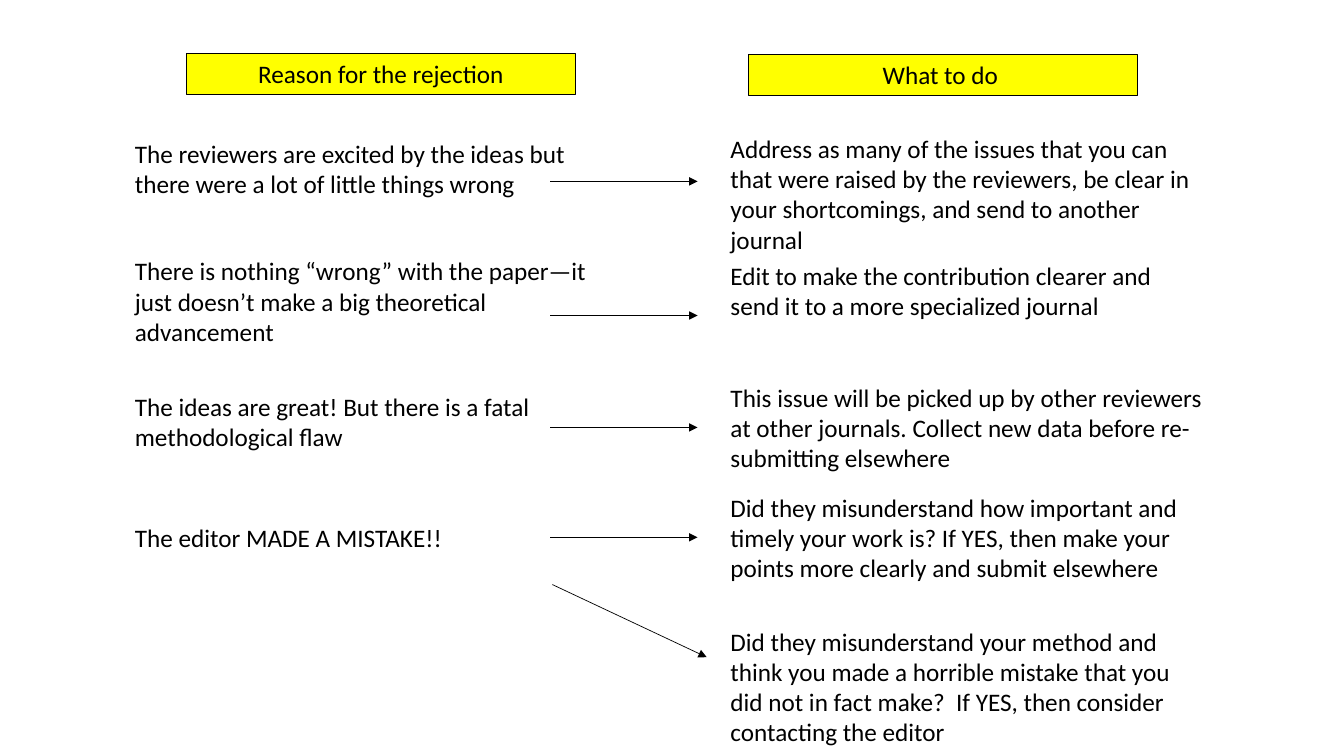
from lxml import etree
from pptx import Presentation
from pptx.dml.color import RGBColor
from pptx.enum.shapes import MSO_CONNECTOR, MSO_SHAPE
from pptx.enum.text import MSO_ANCHOR, MSO_AUTO_SIZE, PP_ALIGN
from pptx.oxml.ns import qn
from pptx.util import Cm, Pt

STRAIGHT = MSO_CONNECTOR.STRAIGHT
RECTANGLE = MSO_SHAPE.RECTANGLE
TOP = MSO_ANCHOR.TOP
GROW = MSO_AUTO_SIZE.SHAPE_TO_FIT_TEXT
LEFT, CENTER = PP_ALIGN.LEFT, PP_ALIGN.CENTER

COLORS = {"ink": "000000", "heading": "FFFF00"}
FRAME_FORMAT = {"word_wrap": True, "auto_size": GROW, "vertical_anchor": TOP}
FONT_FORMAT = {"name": "Calibri", "size": Pt(18)}

# Centimetres
REASON_LEFT, ADVICE_LEFT, COLUMN_WIDTH = 3.15, 18.16, 12.45
HEADING_WIDTH = 9.8
LINE_HEIGHT, PADDING = 0.77, 0.26
ARROW_START, ARROW_END = 13.87, 17.58

HEADINGS = [
    (4.7, 1.35, "Reason for the rejection"),
    (18.87, 1.37, "What to do "),
]

# Top edge, number of lines, wording
REASONS = [
    (3.35, 2, "The reviewers are excited by the ideas but there were a lot of "
              "little things wrong"),
    (6.32, 3, "There is nothing “wrong” with the paper—it just doesn’t make a "
              "big theoretical advancement"),
    (9.73, 2, "The ideas are great! But there is a fatal methodological flaw"),
    (13.03, 1, "The editor MADE A MISTAKE!!"),
]
ADVICE = [
    (3.23, 4, "Address as many of the issues that you can that were raised by the "
              "reviewers, be clear in your shortcomings, and send to another journal"),
    (6.43, 2, "Edit to make the contribution clearer and send it to a more "
              "specialized journal"),
    (9.5, 3, "This issue will be picked up by other reviewers at other journals. "
             "Collect new data before re-submitting elsewhere"),
    (12.27, 3, "Did they misunderstand how important and timely your work is? "
               "If YES, then make your points more clearly and submit elsewhere"),
    (15.65, 4, "Did they misunderstand your method and think you made a horrible "
               "mistake that you did not in fact make?  If YES, then consider "
               "contacting the editor"),
]
ARROW_HEIGHTS = [4.57, 7.95, 10.77, 13.54]
SECOND_MISTAKE_ARROW = ((13.92, 14.73), (17.81, 16.56))


def set_all(target, values):
    for attribute, value in values.items():
        setattr(target, attribute, value)


def color(name):
    return RGBColor.from_string(COLORS[name])


def text_height(lines):
    return PADDING + LINE_HEIGHT * lines


class RejectionSlide:
    """Draws each kind of element on the slide in one shared style."""

    def __init__(self, slide):
        self.shapes = slide.shapes

    def add_wording(self, shape, wording, alignment):
        set_all(shape.text_frame, FRAME_FORMAT)
        paragraph = shape.text_frame.paragraphs[0]
        paragraph.alignment = alignment
        run = paragraph.add_run()
        run.text = wording
        set_all(run.font, FONT_FORMAT)
        run.font.color.rgb = color("ink")

    def outline(self, line, width):
        line.color.rgb = color("ink")
        line.width = Pt(width)

    def heading(self, left, top, wording):
        banner = self.shapes.add_shape(
            RECTANGLE, Cm(left), Cm(top), Cm(HEADING_WIDTH), Cm(text_height(1)))
        banner.shadow.inherit = False
        banner.fill.solid()
        banner.fill.fore_color.rgb = color("heading")
        self.outline(banner.line, 0.75)
        self.add_wording(banner, wording, CENTER)

    def statement(self, left, top, lines, wording):
        box = self.shapes.add_textbox(
            Cm(left), Cm(top), Cm(COLUMN_WIDTH), Cm(text_height(lines)))
        self.add_wording(box, wording, LEFT)

    def arrow(self, start, end):
        connector = self.shapes.add_connector(
            STRAIGHT, *(Cm(value) for value in (*start, *end)))
        self.outline(connector.line, 0.5)
        properties = connector.element.spPr
        head = etree.SubElement(properties.find(qn("a:ln")), qn("a:tailEnd"))
        head.set("type", "triangle")
        etree.SubElement(properties, qn("a:effectLst"))


def main():
    deck = Presentation()
    deck.slide_width, deck.slide_height = Cm(33.87), Cm(19.05)
    page = RejectionSlide(deck.slides.add_slide(deck.slide_layouts[6]))

    for heading in HEADINGS:
        page.heading(*heading)
    for left, column in ((REASON_LEFT, REASONS), (ADVICE_LEFT, ADVICE)):
        for statement in column:
            page.statement(left, *statement)
    for height in ARROW_HEIGHTS:
        page.arrow((ARROW_START, height), (ARROW_END, height))
    page.arrow(*SECOND_MISTAKE_ARROW)

    deck.save("out.pptx")


if __name__ == "__main__":
    main()
